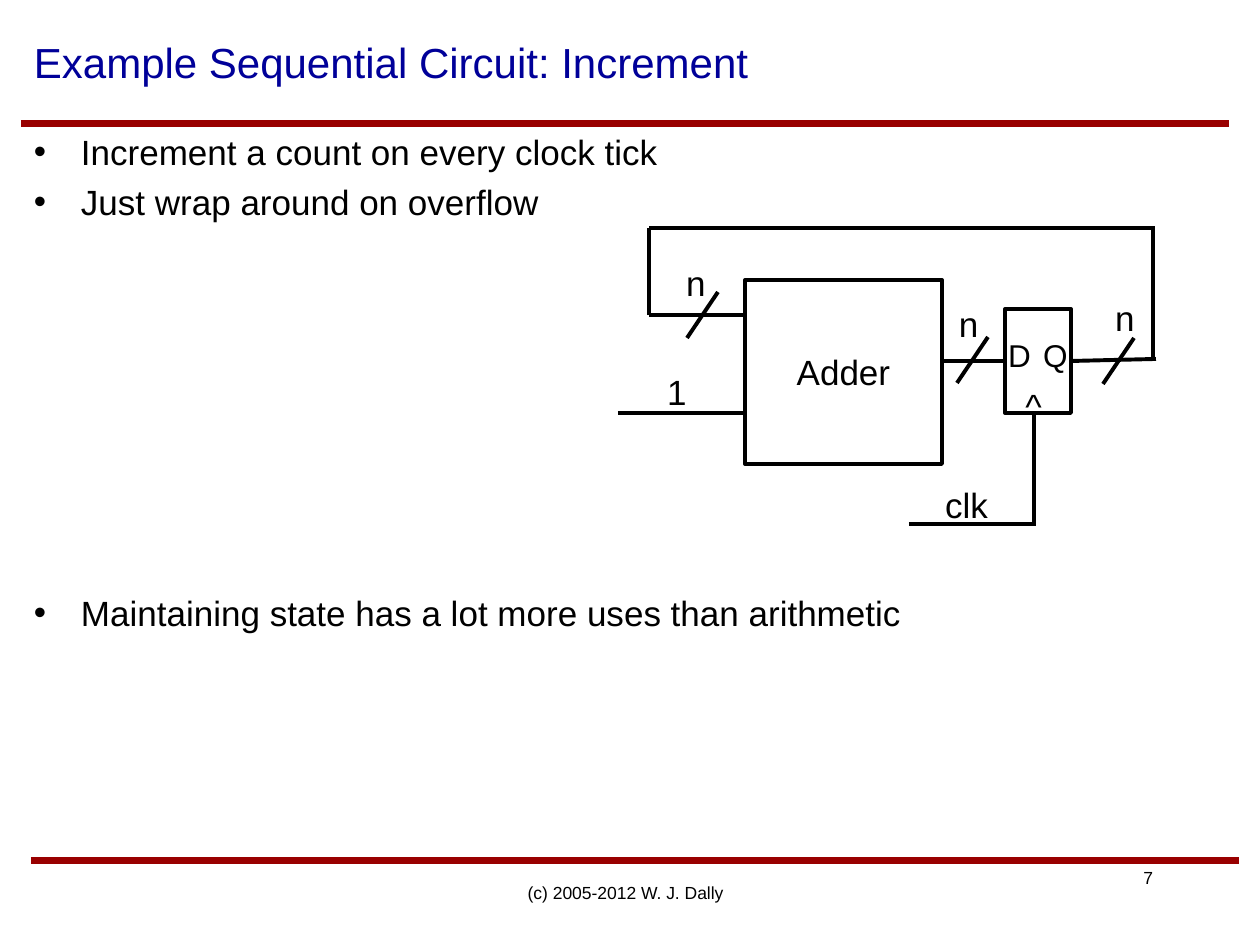
from lxml.etree import SubElement
from pptx import Presentation
from pptx.dml.color import RGBColor
from pptx.enum.shapes import MSO_CONNECTOR, MSO_SHAPE
from pptx.enum.text import MSO_ANCHOR, PP_ALIGN
from pptx.oxml.ns import qn
from pptx.util import Emu, Pt

BLACK, RED, NAVY = "000000", "990000", "000099"
LEFT, TOP, RIGHT, BOTTOM = 21, 124, 1229, 861
INSET_X, INSET_Y, BULLET_INDENT = 13, 6, 47
SLASH_WIDTH, SLASH_HEIGHT = 31, 46


def px(length):
    """Turn pixels at 126 to the inch into EMU."""
    return Emu(round(length * 914400 / 126))


def color(hex_string):
    """Turn a hex string into a colour."""
    return RGBColor.from_string(hex_string)


def style_paragraph(paragraph, size, hex_string=BLACK, align=PP_ALIGN.LEFT):
    """Set the font and alignment of a paragraph."""
    paragraph.alignment = align
    paragraph.font.name = "Arial"
    paragraph.font.size = Pt(size)
    paragraph.font.color.rgb = color(hex_string)


def set_frame(frame, inset_x, inset_y, anchor, wrap):
    """Set the insets, anchor and wrapping of a text frame."""
    frame.margin_left = frame.margin_right = px(inset_x)
    frame.margin_top = frame.margin_bottom = px(inset_y)
    frame.vertical_anchor = anchor
    frame.word_wrap = wrap


def add_text(slide, box, text, size, hex_string=BLACK, align=PP_ALIGN.LEFT,
             anchor=MSO_ANCHOR.MIDDLE, wrap=True):
    """Add a text box with one paragraph and normal insets."""
    frame = slide.shapes.add_textbox(*map(px, box)).text_frame
    set_frame(frame, INSET_X, INSET_Y, anchor, wrap)
    frame.text = text
    style_paragraph(frame.paragraphs[0], size, hex_string, align)


def add_label(slide, x, y, width, text, size=20):
    """Add a centred signal or pin label."""
    frame = slide.shapes.add_textbox(px(x), px(y), px(width), px(size * 2.1)).text_frame
    set_frame(frame, 0, 0, MSO_ANCHOR.MIDDLE, False)
    frame.text = text
    style_paragraph(frame.paragraphs[0], size, align=PP_ALIGN.CENTER)


def add_bullets(slide, box, items):
    """Add a bulleted list with hanging indents."""
    frame = slide.shapes.add_textbox(*map(px, box)).text_frame
    set_frame(frame, INSET_X, INSET_Y, MSO_ANCHOR.TOP, True)
    frame.text = "\n".join(items)
    for paragraph in frame.paragraphs:
        style_paragraph(paragraph, 20)
        paragraph.space_after = Pt(4.6)
        properties = paragraph._p.get_or_add_pPr()
        properties.set("marL", str(px(BULLET_INDENT)))
        properties.set("indent", str(-px(BULLET_INDENT)))
        SubElement(properties, qn("a:buFont"), typeface="Arial")
        SubElement(properties, qn("a:buChar"), char="•")


def add_line(slide, x1, y1, x2, y2, hex_string=BLACK, width=2.25):
    """Add a straight line without a shadow."""
    line = slide.shapes.add_connector(MSO_CONNECTOR.STRAIGHT, *map(px, (x1, y1, x2, y2)))
    line.line.color.rgb = color(hex_string)
    line.line.width = Pt(width)
    SubElement(line._element.spPr, qn("a:effectLst"))
    return line


def add_block(slide, box, text=""):
    """Add an outlined circuit block."""
    block = slide.shapes.add_shape(MSO_SHAPE.RECTANGLE, *map(px, box))
    block.shadow.inherit = False
    block.fill.background()
    block.line.color.rgb = color(BLACK)
    block.line.width = Pt(2.25)
    if text:
        set_frame(block.text_frame, 0, 0, MSO_ANCHOR.MIDDLE, False)
        block.text_frame.text = text
        style_paragraph(block.text_frame.paragraphs[0], 20, align=PP_ALIGN.CENTER)
    return block


def add_circuit(slide):
    """Draw the adder, the register and the wires between them."""
    add_block(slide, (745, 280, 197, 184), "Adder")
    register = add_block(slide, (1005, 309, 66, 104))

    wires = [
        (649, 315, 745, 315),
        (649, 315, 649, 228),
        (1153, 228, 649, 228),
        (1153, 359, 1153, 226),
        (618, 413, 745, 413),
        (909, 524, 1036, 524),
        (1034, 524, 1034, 413),
    ]
    for wire in wires:
        add_line(slide, *wire)
    add_line(slide, 943, 361, 1005, 361).end_connect(register, 1)
    add_line(slide, 1156, 359, 1071, 361).end_connect(register, 3)

    for x, y in [(957, 337), (687, 292), (1103, 338)]:
        add_line(slide, x, y + SLASH_HEIGHT, x + SLASH_WIDTH, y)

    for x, y, width, text in [(686, 261, 19, "n"), (959, 302, 19, "n"),
                              (1115, 296, 19, "n"), (667, 370, 19, "1"),
                              (945, 483, 43, "clk"), (1025, 384, 17, "^")]:
        add_label(slide, x, y, width, text)
    for x, pin in [(1007, "D"), (1043, "Q")]:
        add_label(slide, x, 336, 25, pin, 18)


def main():
    """Build the slide and save it."""
    presentation = Presentation()
    presentation.slide_width, presentation.slide_height = px(1260), px(945)
    slide = presentation.slides.add_slide(presentation.slide_layouts[6])

    add_line(slide, LEFT, TOP, RIGHT, TOP, RED, 4)
    add_line(slide, LEFT + 10, BOTTOM, RIGHT + 10, BOTTOM, RED, 4)
    add_text(slide, (945, BOTTOM, 221, 34), "7", 10,
             align=PP_ALIGN.RIGHT, anchor=MSO_ANCHOR.TOP)
    add_text(slide, (426, BOTTOM, 399, 63), "(c) 2005-2012 W. J. Dally", 10,
             align=PP_ALIGN.CENTER, wrap=False)
    add_text(slide, (LEFT, 0, 1239, TOP), "Example Sequential Circuit: Increment", 24, NAVY)
    add_circuit(slide)
    add_bullets(slide, (LEFT, TOP, RIGHT - LEFT, BOTTOM - TOP),
                ["Increment a count on every clock tick", "Just wrap around on overflow"])
    add_bullets(slide, (LEFT, 585, RIGHT - LEFT, 198),
                ["Maintaining state has a lot more uses than arithmetic"])
    presentation.save("out.pptx")


if __name__ == "__main__":
    main()
